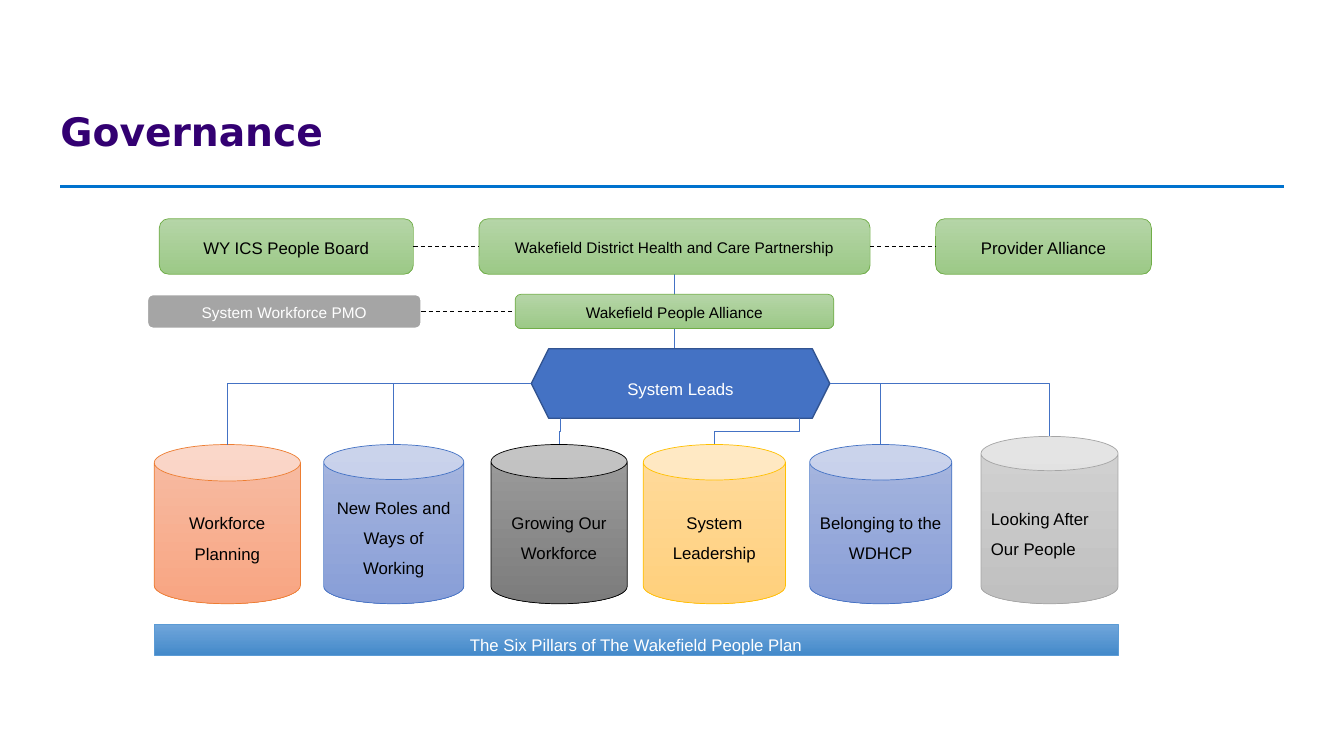
from lxml import etree
from pptx import Presentation
from pptx.dml.color import RGBColor
from pptx.enum import dml, shapes, text
from pptx.oxml.ns import qn
from pptx.util import Inches, Pt

WHITE = RGBColor(0xFF, 0xFF, 0xFF)
BLACK = RGBColor(0, 0, 0)
PURPLE = RGBColor(0x33, 0x00, 0x72)
RULE_BLUE = RGBColor(0x00, 0x72, 0xCE)
BLUE = RGBColor(0x44, 0x72, 0xC4)
NAVY = RGBColor(0x32, 0x54, 0x91)
GREY = RGBColor(0xA5, 0xA5, 0xA5)
GREEN = RGBColor(0x70, 0xAD, 0x47)
ORANGE = RGBColor(0xED, 0x7D, 0x31)
GOLD = RGBColor(0xFF, 0xC0, 0x00)
SKY = RGBColor(0x5B, 0x9B, 0xD5)
GREEN_FADE = RGBColor(0xB5, 0xD5, 0xA7), RGBColor(0x9C, 0xC9, 0x87)
ORANGE_FADE = RGBColor(0xF7, 0xBD, 0xA5), RGBColor(0xF8, 0xA5, 0x82)
BLUE_FADE = RGBColor(0xA8, 0xB7, 0xDF), RGBColor(0x88, 0x9E, 0xD7)
DARK_FADE = RGBColor(0x9D, 0x9D, 0x9D), RGBColor(0x7C, 0x7C, 0x7C)
GOLD_FADE = RGBColor(0xFF, 0xDB, 0x9E), RGBColor(0xFF, 0xD0, 0x7C)
GREY_FADE = RGBColor(0xD2, 0xD2, 0xD2), RGBColor(0xC0, 0xC0, 0xC0)
SKY_FADE = RGBColor(0x71, 0xA6, 0xDB), RGBColor(0x44, 0x8A, 0xCA)

SHAPE = shapes.MSO_SHAPE
LINK = shapes.MSO_CONNECTOR

BOARDS = {
    "WY ICS People Board": (1.58, 2.17, 2.52, 0.55, 12),
    "Wakefield District Health and Care Partnership": (4.75, 2.17, 3.88, 0.55, 11),
    "Provider Alliance": (9.28, 2.17, 2.14, 0.55, 12),
    "Wakefield People Alliance": (5.11, 2.92, 3.16, 0.34, 11),
}
PILLARS = [
    ("Workforce Planning", 1.53, 4.41, 1.45, ORANGE_FADE, ORANGE),
    ("New Roles and Ways of Working", 3.21, 4.41, 1.39, BLUE_FADE, BLUE),
    ("Growing Our Workforce", 4.87, 4.41, 1.35, DARK_FADE, BLACK),
    ("System Leadership", 6.38, 4.41, 1.41, GOLD_FADE, GOLD),
    ("Belonging to the WDHCP", 8.03, 4.41, 1.41, BLUE_FADE, BLUE),
    ("Looking After Our People", 9.73, 4.33, 1.36, GREY_FADE, GREY),
]
PILLAR_BOTTOM = 5.99
LEADS = (5.27, 3.46, 2.96, 0.69)
LEADS_EXITS = {"Growing Our Workforce": 5.56, "System Leadership": 7.93}


def add_line(page, start, end, color, width, kind=LINK.STRAIGHT):
    line = page.shapes.add_connector(kind, *map(Inches, start + end))
    line.line.color.rgb = color
    line.line.width = Pt(width)
    etree.SubElement(line._element.spPr, qn("a:effectLst"))
    return line


def add_corner(page, start, end):
    corner = add_line(page, start, end, BLUE, 0.5, LINK.ELBOW)
    corner._element.spPr.find(qn("a:prstGeom")).set("prst", "bentConnector2")


def add_step(page, start, end):
    middle_x, middle_y = (start[0] + end[0]) / 2, (start[1] + end[1]) / 2
    half_run, half_drop = (start[0] - end[0]) / 2, (end[1] - start[1]) / 2
    step = add_line(page, (middle_x - half_drop, middle_y - half_run),
                    (middle_x + half_drop, middle_y + half_run), BLUE, 0.5, LINK.ELBOW)
    step._element.spPr.find(qn("a:xfrm")).set("rot", "5400000")


def add_dash(page, left_box, right_box):
    dash = add_line(page, (0, 0), (1, 1), BLACK, 0.75)
    dash.line.dash_style = dml.MSO_LINE.DASH
    dash.begin_connect(left_box, 3)
    dash.end_connect(right_box, 1)


def add_box(page, kind, place, words, fill, outline, ink=BLACK, size=12,
            width=0.5, spacing=1.5, after=6, align=text.PP_ALIGN.CENTER):
    box = page.shapes.add_shape(kind, *map(Inches, place))
    box.shadow.inherit = False
    if isinstance(fill, RGBColor):
        box.fill.solid()
        box.fill.fore_color.rgb = fill
    else:
        box.fill.gradient()
        box.fill.gradient_angle = 270
        for stop, color in zip(box.fill.gradient_stops, fill):
            stop.color.rgb = color
    box.line.color.rgb = outline
    box.line.width = Pt(width)
    frame = box.text_frame
    frame.word_wrap = True
    frame.vertical_anchor = text.MSO_ANCHOR.MIDDLE
    para = frame.paragraphs[0]
    para.text = words
    para.alignment = align
    para.line_spacing = spacing
    para.space_after = Pt(after)
    para.font.name = "Arial"
    para.font.size = Pt(size)
    para.font.color.rgb = ink
    return box


def add_title(page):
    title = page.shapes.title
    title.left, title.top, title.width, title.height = map(Inches, (0, 0.6, 12.73, 1.23))
    frame = title.text_frame
    frame.margin_left, frame.margin_bottom = Inches(0.6), Inches(0.3)
    frame.margin_top = frame.margin_right = 0
    frame.vertical_anchor = text.MSO_ANCHOR.BOTTOM
    frame.auto_size = text.MSO_AUTO_SIZE.NONE
    para = frame.paragraphs[0]
    para.text = "Governance"
    para.alignment = text.PP_ALIGN.LEFT
    para.font.name = "DejaVu Sans"
    para.font.size = Pt(28)
    para.font.bold = True
    para.font.color.rgb = PURPLE


def main():
    deck = Presentation()
    deck.slide_width, deck.slide_height = Inches(13.33), Inches(7.5)
    page = deck.slides.add_slide(deck.slide_layouts[5])
    add_title(page)
    add_line(page, (0.6, 1.85), (12.73, 1.85), RULE_BLUE, 1.5)

    spine = add_line(page, (6.69, 2.72), (6.69, 4.06), BLUE, 0.5)
    people_board, partnership, provider, alliance = [
        add_box(page, SHAPE.ROUNDED_RECTANGLE, place, name, GREEN_FADE, GREEN,
                size=size, spacing=1.15, after=6 if size == 12 else 8)
        for name, (*place, size) in BOARDS.items()]
    spine.begin_connect(partnership, 2)
    office = add_box(page, SHAPE.ROUNDED_RECTANGLE, (1.46, 2.92, 2.72, 0.34),
                     "System Workforce PMO", GREY, WHITE, WHITE, 11, 1.5, 1.15, 8)
    for left_box, right_box in ((people_board, partnership), (partnership, provider),
                                (office, alliance)):
        add_dash(page, left_box, right_box)

    add_box(page, SHAPE.HEXAGON, LEADS, "System Leads", BLUE, NAVY, WHITE, width=1)
    left, top, width, height = LEADS
    for name, x, y, breadth, fade, outline in PILLARS:
        align = text.PP_ALIGN.LEFT if fade == GREY_FADE else text.PP_ALIGN.CENTER
        add_box(page, SHAPE.CAN, (x, y, breadth, PILLAR_BOTTOM - y), name,
                fade, outline, align=align)
        lid = (x + breadth / 2, y)
        if name in LEADS_EXITS:
            add_step(page, (LEADS_EXITS[name], top + height), lid)
        else:
            side = left if lid[0] < left else left + width
            add_corner(page, (side, top + height / 2), lid)

    add_box(page, SHAPE.RECTANGLE, (1.53, 6.19, 9.56, 0.31),
            "The Six Pillars of The Wakefield People Plan", SKY_FADE, SKY, WHITE)
    deck.save("out.pptx")


if __name__ == "__main__":
    main()
